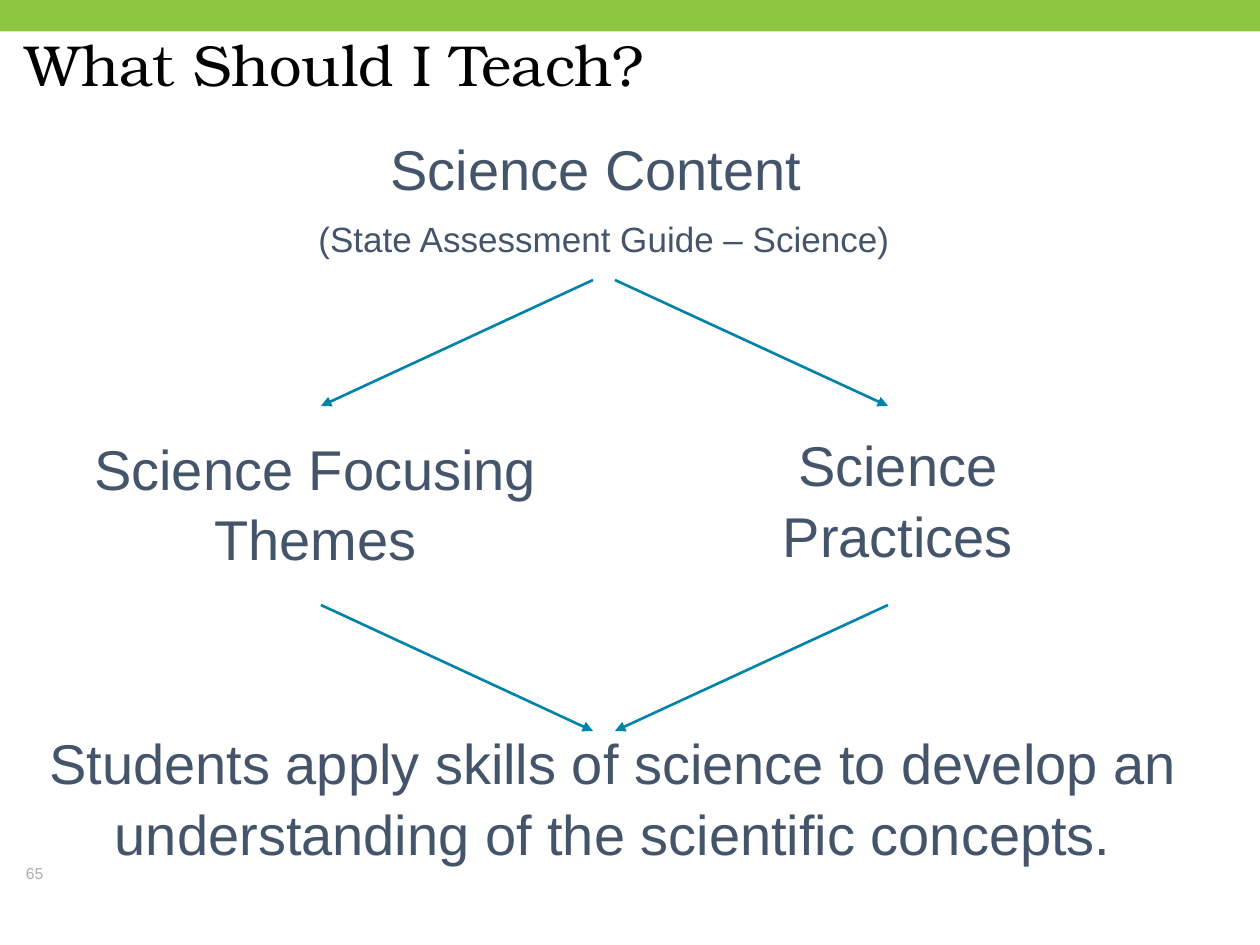
from dataclasses import dataclass

from lxml import etree
from pptx import Presentation, util as u
from pptx.dml.color import RGBColor
from pptx.enum import shapes, text
from pptx.oxml.ns import qn

PX = u.Inches(1) / 126


@dataclass(frozen=True)
class Theme:
    band: str = "8DC63F"
    arrow: str = "0083A9"
    title: str = "000000"
    body: str = "44546A"
    muted: str = "AFABAB"
    title_font: str = "TeX Gyre Bonum"
    body_font: str = "Arial"
    title_size: int = 33
    body_size: int = 32
    source_size: int = 20
    number_size: int = 9


THEME = Theme()
TITLE = "What Should I Teach?"
PAGE_NUMBER = "65"
BODY = THEME.body_size

# (left, top, width, height) in px, then (text, size) for each paragraph
CONCEPTS = [
    ((79, 425, 473, 149), [("Science Focusing Themes", BODY)]),
    ((284, 125, 640, 144), [("Science Content ", BODY),
                            ("(State Assessment Guide – Science)", THEME.source_size)]),
    ((19, 719, 1189, 149), [("Students apply skills of science to develop an "
                             "understanding of the scientific concepts.", BODY)]),
    ((687, 421, 422, 149), [("Science Practices", BODY)]),
]

# (outer x, inner x) of the left and right arrows
ARROW_SIDES = [(321, 593), (888, 615)]
FAN_OUT = (280, 406)
FAN_IN = (605, 731)


def px(*lengths):
    return [round(length * PX) for length in lengths]


def add_text(slide, box, paragraphs, color, font=THEME.body_font, inset=True,
             align=text.PP_ALIGN.LEFT, anchor=text.MSO_ANCHOR.TOP, spacing=1.0):
    frame = slide.shapes.add_textbox(*px(*box)).text_frame
    frame.word_wrap = True
    frame.vertical_anchor = anchor
    if not inset:
        frame.margin_left = frame.margin_right = 0
        frame.margin_top = frame.margin_bottom = 0
    for index, (words, size) in enumerate(paragraphs):
        paragraph = frame.add_paragraph() if index else frame.paragraphs[0]
        paragraph.alignment = align
        paragraph.line_spacing = spacing
        if index:
            paragraph.space_before = u.Pt(8)
        run = paragraph.add_run()
        run.text = words
        run.font.name = font
        run.font.size = u.Pt(size)
        run.font.color.rgb = RGBColor.from_string(color)


def add_arrow(slide, start, end):
    arrow = slide.shapes.add_connector(shapes.MSO_CONNECTOR.STRAIGHT, *px(*start, *end))
    arrow.line.color.rgb = RGBColor.from_string(THEME.arrow)
    arrow.line.width = u.Pt(1.5)
    etree.SubElement(arrow.line._get_or_add_ln(), qn("a:tailEnd"), type="triangle")
    etree.SubElement(arrow._element.spPr, qn("a:effectLst"))


def main():
    presentation = Presentation()
    presentation.slide_width, presentation.slide_height = px(1260, 945)
    slide = presentation.slides.add_slide(presentation.slide_layouts[6])

    band = slide.shapes.add_shape(shapes.MSO_SHAPE.RECTANGLE, *px(0, 0, 1260, 31.5))
    band.shadow.inherit = False
    band.fill.solid()
    band.fill.fore_color.rgb = RGBColor.from_string(THEME.band)
    band.line.fill.background()

    for box, paragraphs in CONCEPTS:
        add_text(slide, box, paragraphs, THEME.body,
                 align=text.PP_ALIGN.CENTER, spacing=1.05)

    for outer, inner in ARROW_SIDES:
        add_arrow(slide, (inner, FAN_OUT[0]), (outer, FAN_OUT[1]))
        add_arrow(slide, (outer, FAN_IN[0]), (inner, FAN_IN[1]))

    add_text(slide, (26, 37, 1173, 73), [(TITLE, THEME.title_size)], THEME.title,
             font=THEME.title_font, inset=False, spacing=0.9)
    add_text(slide, (26, 853, 284, 30), [(PAGE_NUMBER, THEME.number_size)], THEME.muted,
             inset=False, anchor=text.MSO_ANCHOR.BOTTOM)

    presentation.save("out.pptx")


if __name__ == "__main__":
    main()
